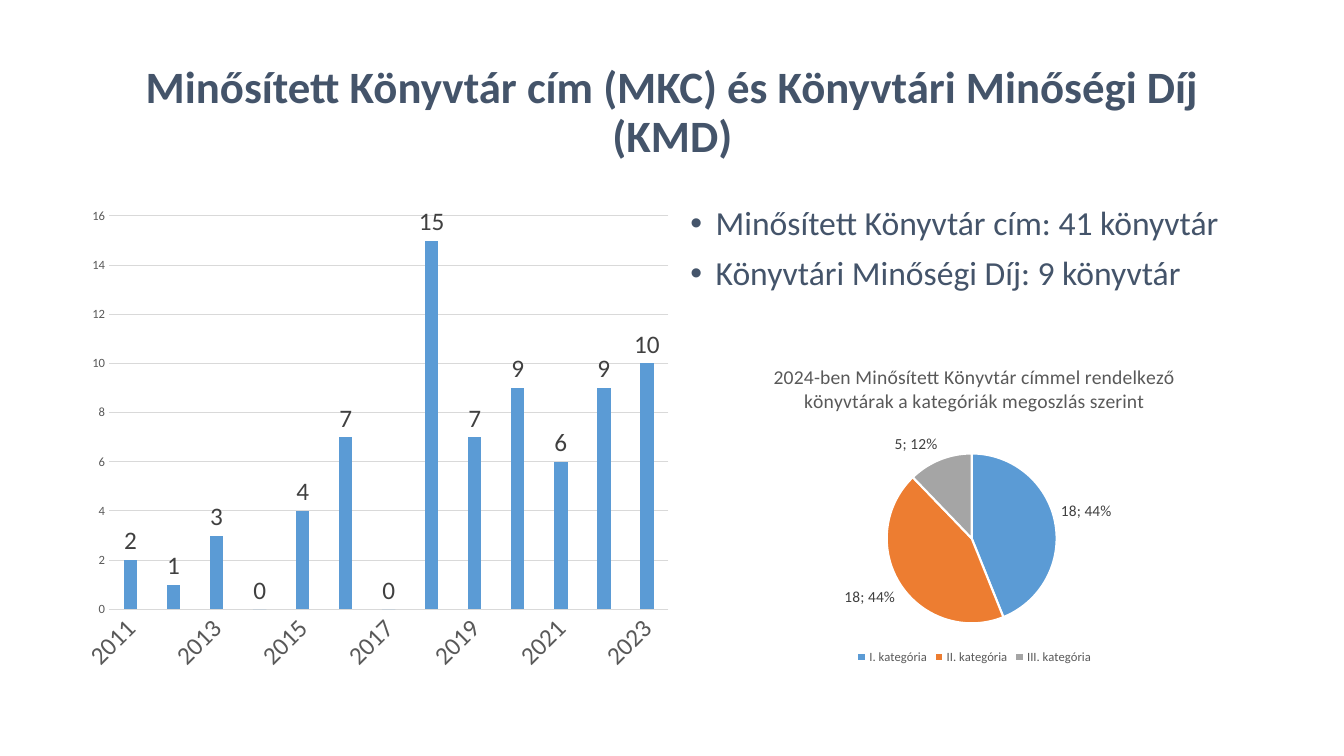
from dataclasses import dataclass

from lxml import etree
from pptx import Presentation
from pptx.chart.chart import Chart
from pptx.chart.data import CategoryChartData
from pptx.dml.color import RGBColor
from pptx.enum.chart import XL_CHART_TYPE, XL_LABEL_POSITION, XL_LEGEND_POSITION, XL_TICK_MARK
from pptx.enum.text import MSO_ANCHOR, PP_ALIGN
from pptx.oxml import parse_xml
from pptx.oxml.ns import nsdecls, qn
from pptx.util import Inches, Pt

COLUMN, PIE = XL_CHART_TYPE.COLUMN_CLUSTERED, XL_CHART_TYPE.PIE
OUTSIDE_END = XL_LABEL_POSITION.OUTSIDE_END
LEGEND_BOTTOM = XL_LEGEND_POSITION.BOTTOM
NO_TICK = XL_TICK_MARK.NONE
TOP, MIDDLE = MSO_ANCHOR.TOP, MSO_ANCHOR.MIDDLE
LEFT, CENTER = PP_ALIGN.LEFT, PP_ALIGN.CENTER


@dataclass(frozen=True)
class Theme:
    font: str = "Calibri"
    text: str = "44546A"
    panel: str = "FFFFFF"
    panel_alpha: int = 70
    axis_text: str = "595959"
    label_text: str = "404040"
    grid: str = "D9D9D9"
    series: tuple[str, ...] = ("5B9BD5", "ED7D31", "A5A5A5")
    title_size: float = 32
    body_size: float = 24
    category_size: float = 18
    chart_title_size: float = 14
    pie_label_size: float = 11
    small_size: float = 9


@dataclass(frozen=True)
class Box:
    left: float
    top: float
    width: float
    height: float

    def emu(self) -> tuple[int, ...]:
        return tuple(Inches(v) for v in (self.left, self.top, self.width, self.height))


@dataclass(frozen=True)
class TextPanel:
    box: Box
    lines: tuple[str, ...]
    size: float
    bold: bool = False
    bulleted: bool = False
    align: PP_ALIGN = LEFT
    anchor: MSO_ANCHOR = TOP


@dataclass(frozen=True)
class ChartPanel:
    """A chart with its plot area given as fractions of the box."""
    kind: XL_CHART_TYPE
    box: Box
    plot: Box
    categories: tuple[str, ...]
    values: tuple[int, ...]


THEME = Theme()
TEXTS = (
    TextPanel(Box(0.92, 0.4, 11.5, 1.45),
              ("Minősített Könyvtár cím (MKC) és Könyvtári Minőségi Díj (KMD)",),
              THEME.title_size, bold=True, align=CENTER, anchor=MIDDLE),
    TextPanel(Box(6.75, 2, 5.67, 4.76),
              ("Minősített Könyvtár cím: 41 könyvtár", "Könyvtári Minőségi Díj: 9 könyvtár"),
              THEME.body_size, bulleted=True),
)
YEARLY = ChartPanel(COLUMN, Box(0.72, 2, 6.03, 4.76), Box(0.06, 0.03, 0.92, 0.82),
                    tuple(str(year) for year in range(2011, 2024)),
                    (2, 1, 3, 0, 4, 7, 0, 15, 7, 9, 6, 9, 10))
CATEGORIES = ChartPanel(PIE, Box(6.92, 3.45, 5.49, 3.18), Box(0.34, 0.33, 0.31, 0.53),
                        ("I. kategória", "II. kategória", "III. kategória"), (18, 18, 5))
PIE_TITLE = "2024-ben Minősített Könyvtár címmel rendelkező könyvtárak a kategóriák megoszlás szerint"


def rgb(color: str) -> RGBColor:
    return RGBColor.from_string(color)


def style_font(font, size: float, color: str, bold: bool = False) -> None:
    font.name, font.size, font.bold = THEME.font, Pt(size), bold
    font.color.rgb = rgb(color)


def add_bullet(p) -> None:
    pPr = p._p.get_or_add_pPr()
    pPr.set("marL", str(Inches(0.25)))
    pPr.set("indent", str(-Inches(0.25)))
    etree.SubElement(pPr, qn("a:buFont")).set("typeface", "Arial")
    etree.SubElement(pPr, qn("a:buChar")).set("char", "•")


def add_text(slide, panel: TextPanel) -> None:
    s = slide.shapes.add_textbox(*panel.box.emu())
    s.fill.solid()
    s.fill.fore_color.rgb = rgb(THEME.panel)
    color = s._element.spPr.find(f".//{qn('a:srgbClr')}")
    etree.SubElement(color, qn("a:alpha")).set("val", str(THEME.panel_alpha * 1000))
    tf = s.text_frame
    tf.word_wrap, tf.vertical_anchor = True, panel.anchor
    for i, line in enumerate(panel.lines):
        p = tf.add_paragraph() if i else tf.paragraphs[0]
        if panel.bulleted:
            add_bullet(p)
        p.alignment, p.line_spacing = panel.align, 0.9
        p.space_before = Pt(10 if i else 0)
        r = p.add_run()
        r.text = line
        style_font(r.font, panel.size, THEME.text, panel.bold)


def chart_fill():
    return parse_xml(
        f'<c:spPr {nsdecls("c", "a")}><a:solidFill><a:srgbClr val="{THEME.panel}">'
        f'<a:alpha val="{THEME.panel_alpha * 1000}"/></a:srgbClr></a:solidFill>'
        '<a:ln><a:noFill/></a:ln></c:spPr>')


def place_plot(chart: Chart, plot: Box) -> None:
    area = chart.element.find(f".//{qn('c:plotArea')}")
    for old in area.findall(qn("c:layout")):
        area.remove(old)
    layout = etree.Element(qn("c:layout"))
    manual = etree.SubElement(layout, qn("c:manualLayout"))
    settings = (("layoutTarget", "inner"), ("xMode", "edge"), ("yMode", "edge"),
                ("x", plot.left), ("y", plot.top), ("w", plot.width), ("h", plot.height))
    for tag, value in settings:
        etree.SubElement(manual, qn(f"c:{tag}")).set("val", str(value))
    area.insert(0, layout)


def add_chart(slide, panel: ChartPanel, label_size: float) -> Chart:
    data = CategoryChartData()
    data.categories = panel.categories
    data.add_series("Series 1", panel.values)
    chart = slide.shapes.add_chart(panel.kind, *panel.box.emu(), data).chart
    style_font(chart.font, 10, "000000")
    chart.has_title = chart.has_legend = False
    place_plot(chart, panel.plot)
    plot = chart.plots[0]
    plot.has_data_labels = True
    labels = plot.data_labels
    labels.show_value, labels.position = True, OUTSIDE_END
    style_font(labels.font, label_size, THEME.label_text)
    return chart


def add_yearly_chart(slide) -> None:
    chart = add_chart(slide, YEARLY, THEME.category_size)
    chart.element.find(qn("c:chart")).addnext(chart_fill())
    chart.element.find(f".//{qn('c:plotArea')}").append(chart_fill())
    plot = chart.plots[0]
    plot.vary_by_categories, plot.gap_width, plot.overlap = False, 219, -27
    fill = plot.series[0].format.fill
    fill.solid()
    fill.fore_color.rgb = rgb(THEME.series[0])

    years, counts = chart.category_axis, chart.value_axis
    for axis, size in ((years, THEME.category_size), (counts, THEME.small_size)):
        axis.major_tick_mark = axis.minor_tick_mark = NO_TICK
        style_font(axis.tick_labels.font, size, THEME.axis_text)
    years.has_major_gridlines = False
    years._element.find(f"{qn('c:txPr')}/{qn('a:bodyPr')}").set("rot", str(-45 * 60000))
    skip = etree.Element(qn("c:tickLblSkip"))
    skip.set("val", "2")
    years._element.find(qn("c:noMultiLvlLbl")).addprevious(skip)
    counts.minimum_scale, counts.maximum_scale, counts.major_unit = 0, 16, 2
    counts.format.line.fill.background()
    for line in (years.format.line, counts.major_gridlines.format.line):
        line.color.rgb, line.width = rgb(THEME.grid), Pt(0.75)


def add_category_chart(slide) -> None:
    chart = add_chart(slide, CATEGORIES, THEME.pie_label_size)
    chart.has_title = chart.has_legend = True
    r = chart.chart_title.text_frame.paragraphs[0].add_run()
    r.text = PIE_TITLE
    style_font(r.font, THEME.chart_title_size, THEME.axis_text)
    chart.legend.position, chart.legend.include_in_layout = LEGEND_BOTTOM, False
    style_font(chart.legend.font, THEME.small_size, THEME.axis_text)
    plot = chart.plots[0]
    plot.vary_by_categories = True
    plot.data_labels.show_percentage = True
    separator = etree.Element(qn("c:separator"))
    separator.text = "; "
    plot.data_labels._element.find(qn("c:showBubbleSize")).addnext(separator)
    for i, color in enumerate(THEME.series):
        look = plot.series[0].points[i].format
        look.fill.solid()
        look.fill.fore_color.rgb = rgb(color)
        look.line.color.rgb, look.line.width = rgb(THEME.panel), Pt(1.5)


def main() -> None:
    prs = Presentation()
    prs.slide_width, prs.slide_height = Inches(13.33), Inches(7.5)
    slide = prs.slides.add_slide(prs.slide_layouts[6])
    for panel in TEXTS:
        add_text(slide, panel)
    add_yearly_chart(slide)
    add_category_chart(slide)
    prs.save("out.pptx")


if __name__ == "__main__":
    main()
